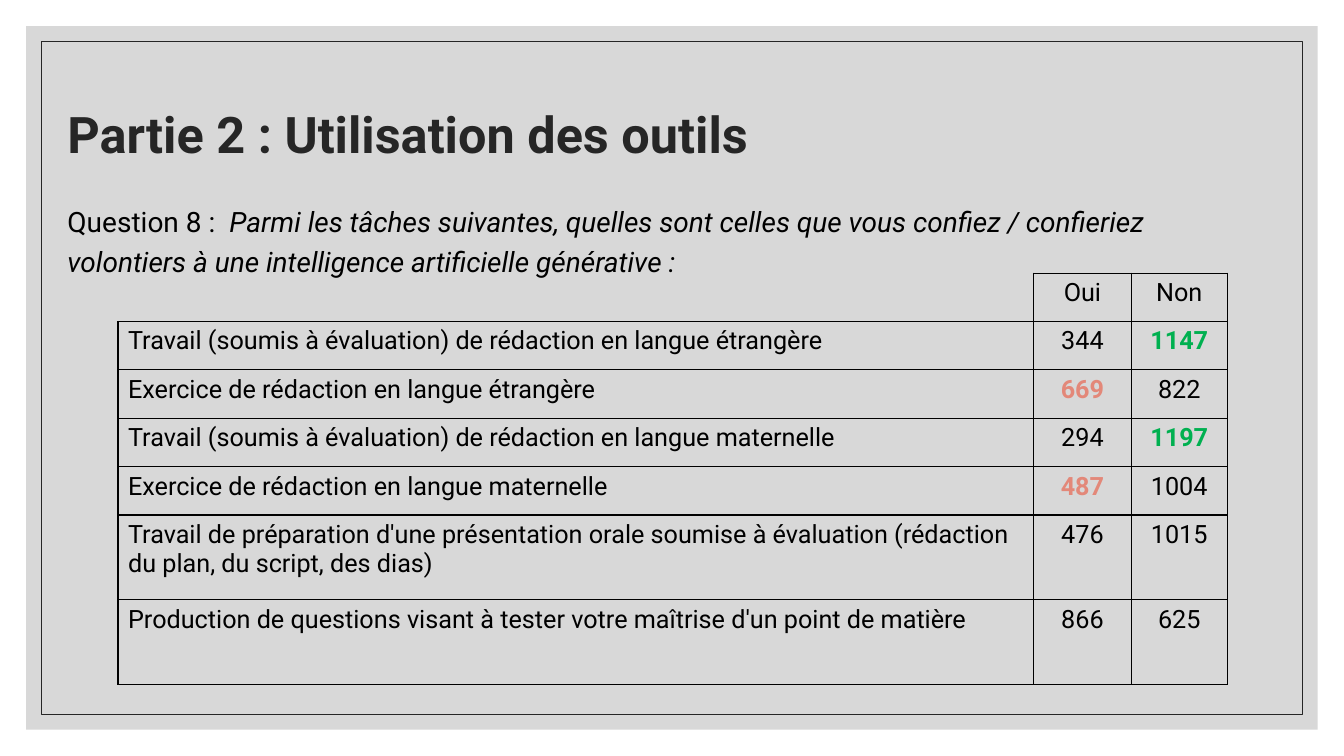
from dataclasses import dataclass
from typing import Any

from lxml import etree
from pptx import Presentation
from pptx.dml.color import RGBColor
from pptx.enum.shapes import MSO_SHAPE
from pptx.enum.text import MSO_ANCHOR, PP_ALIGN
from pptx.oxml.ns import qn
from pptx.util import Emu, Inches, Pt

RECTANGLE = MSO_SHAPE.RECTANGLE
LEFT, CENTER = PP_ALIGN.LEFT, PP_ALIGN.CENTER
TOP, MIDDLE = MSO_ANCHOR.TOP, MSO_ANCHOR.MIDDLE
SLIDE_WIDTH, SLIDE_HEIGHT = Inches(13.33), Inches(7.5)
BLANK_LAYOUT = 6


@dataclass(frozen=True)
class Theme:
    font: str = "Roboto"
    ink: str = "000000"
    heading: str = "262626"
    panel: str = "BFBFBF"
    panel_opacity: int = 60
    mostly_no: str = "00B050"
    often_yes: str = "E38879"
    title_size: int = 36
    question_size: int = 20
    table_size: int = 18
    frame_line: float = 0.5
    table_line: float = 1


THEME = Theme()


@dataclass(frozen=True)
class Area:
    """Percentages of the slide's width and height."""

    x: float
    y: float
    width: float
    height: float

    def box(self) -> tuple[Emu, Emu, Emu, Emu]:
        return across(self.x), down(self.y), across(self.width), down(self.height)


@dataclass(frozen=True)
class Span:
    text: str
    size: int
    color: str = THEME.ink
    bold: bool = False
    italic: bool = False


@dataclass(frozen=True)
class Task:
    label: str
    yes: int
    no: int
    yes_color: str = ""
    no_color: str = ""
    height: float = 6.4


TITLE_AREA = Area(4.28, 8.13, 82.52, 20)
QUESTION_AREA = Area(4.28, 25.47, 87.02, 56.13)
TABLE_X, TABLE_Y = 8.78, 36.13
COLUMN_WIDTHS = (68.12, 7.28, 7.13)
HEADER_HEIGHT = 6.4
TALL_ROW = 11.2

TITLE = Span("Partie 2 : Utilisation des outils", THEME.title_size, THEME.heading, bold=True)
QUESTION = (
    Span("Question 8 : ", THEME.question_size),
    Span(
        " Parmi les tâches suivantes, quelles sont celles que vous confiez / confieriez "
        "volontiers à une intelligence artificielle générative :",
        THEME.question_size,
        italic=True,
    ),
)
TASKS = (
    Task("Travail (soumis à évaluation) de rédaction en langue étrangère", 344, 1147,
         no_color=THEME.mostly_no),
    Task("Exercice de rédaction en langue étrangère", 669, 822, yes_color=THEME.often_yes),
    Task("Travail (soumis à évaluation) de rédaction en langue maternelle", 294, 1197,
         no_color=THEME.mostly_no),
    Task("Exercice de rédaction en langue maternelle", 487, 1004, yes_color=THEME.often_yes),
    Task("Travail de préparation d'une présentation orale soumise à évaluation "
         "(rédaction du plan, du script, des dias)", 476, 1015, height=TALL_ROW),
    Task("Production de questions visant à tester votre maîtrise d'un point de matière",
         866, 625, height=TALL_ROW),
)


def across(percent: float) -> Emu:
    return Emu(round(SLIDE_WIDTH * percent / 100))


def down(percent: float) -> Emu:
    return Emu(round(SLIDE_HEIGHT * percent / 100))


def apply_format(target: Any, values: dict[str, Any]) -> None:
    for attribute, value in values.items():
        setattr(target, attribute, value)


def write_spans(paragraph: Any, spans: tuple[Span, ...], layout: dict[str, Any]) -> None:
    apply_format(paragraph, layout)
    for span in spans:
        run = paragraph.add_run()
        run.text = span.text
        apply_format(run.font, {
            "name": THEME.font,
            "size": Pt(span.size),
            "bold": span.bold,
            "italic": span.italic,
        })
        run.font.color.rgb = RGBColor.from_string(span.color)


def add_inset_rectangle(slide: Any, inset_x: float, inset_y: float) -> Any:
    area = Area(inset_x, inset_y, 100 - 2 * inset_x, 100 - 2 * inset_y)
    rectangle = slide.shapes.add_shape(RECTANGLE, *area.box())
    rectangle.shadow.inherit = False
    return rectangle


def add_backdrop(slide: Any) -> None:
    panel = add_inset_rectangle(slide, 1.95, 3.47)
    panel.fill.solid()
    panel.fill.fore_color.rgb = RGBColor.from_string(THEME.panel)
    panel.line.fill.background()
    panel_color = panel.fill._xPr.find(qn("a:solidFill")).find(qn("a:srgbClr"))
    etree.SubElement(panel_color, qn("a:alpha"), val=str(THEME.panel_opacity * 1000))

    frame = add_inset_rectangle(slide, 3.08, 5.47)
    frame.fill.background()
    frame.line.color.rgb = RGBColor.from_string(THEME.heading)
    frame.line.width = Pt(THEME.frame_line)


def add_text(slide: Any, area: Area, spans: tuple[Span, ...], anchor: Any,
             layout: dict[str, Any]) -> None:
    text_frame = slide.shapes.add_textbox(*area.box()).text_frame
    apply_format(text_frame, {"word_wrap": True, "vertical_anchor": anchor})
    write_spans(text_frame.paragraphs[0], spans, layout)


def draw_borders(cell: Any, sides: str) -> None:
    properties = cell._tc.get_or_add_tcPr()
    for side in "LRTB":
        border = etree.SubElement(properties, qn(f"a:ln{side}"), w=str(Pt(THEME.table_line)))
        if side in sides:
            fill = etree.SubElement(border, qn("a:solidFill"))
            etree.SubElement(fill, qn("a:srgbClr"), val=THEME.ink)
        else:
            etree.SubElement(border, qn("a:noFill"))


def table_span(text: str, highlight: str = "") -> Span:
    return Span(text, THEME.table_size, highlight or THEME.ink, bold=bool(highlight))


def add_answers(slide: Any) -> None:
    heights = [HEADER_HEIGHT, *(task.height for task in TASKS)]
    area = Area(TABLE_X, TABLE_Y, sum(COLUMN_WIDTHS), sum(heights))
    answers = slide.shapes.add_table(len(heights), len(COLUMN_WIDTHS), *area.box()).table
    apply_format(answers, {"first_row": False, "horz_banding": False})
    for column, width in zip(answers.columns, COLUMN_WIDTHS):
        column.width = across(width)
    for row, height in zip(answers.rows, heights):
        row.height = down(height)

    lines = [(None, table_span("Oui"), table_span("Non"))]
    lines += [
        (table_span(task.label), table_span(str(task.yes), task.yes_color),
         table_span(str(task.no), task.no_color))
        for task in TASKS
    ]
    for row_index, line in enumerate(lines):
        for column_index, span in enumerate(line):
            cell = answers.cell(row_index, column_index)
            draw_borders(cell, "LRTB" if span else "RB")
            cell.fill.background()
            if span:
                alignment = CENTER if column_index else LEFT
                write_spans(cell.text_frame.paragraphs[0], (span,), {"alignment": alignment})


def main() -> None:
    presentation = Presentation()
    apply_format(presentation, {"slide_width": SLIDE_WIDTH, "slide_height": SLIDE_HEIGHT})
    slide = presentation.slides.add_slide(presentation.slide_layouts[BLANK_LAYOUT])
    add_backdrop(slide)
    add_text(slide, TITLE_AREA, (TITLE,), MIDDLE, {"line_spacing": 0.9})
    add_text(slide, QUESTION_AREA, QUESTION, TOP, {"line_spacing": 1.2, "space_before": Pt(9)})
    add_answers(slide)
    presentation.save("out.pptx")


if __name__ == "__main__":
    main()
